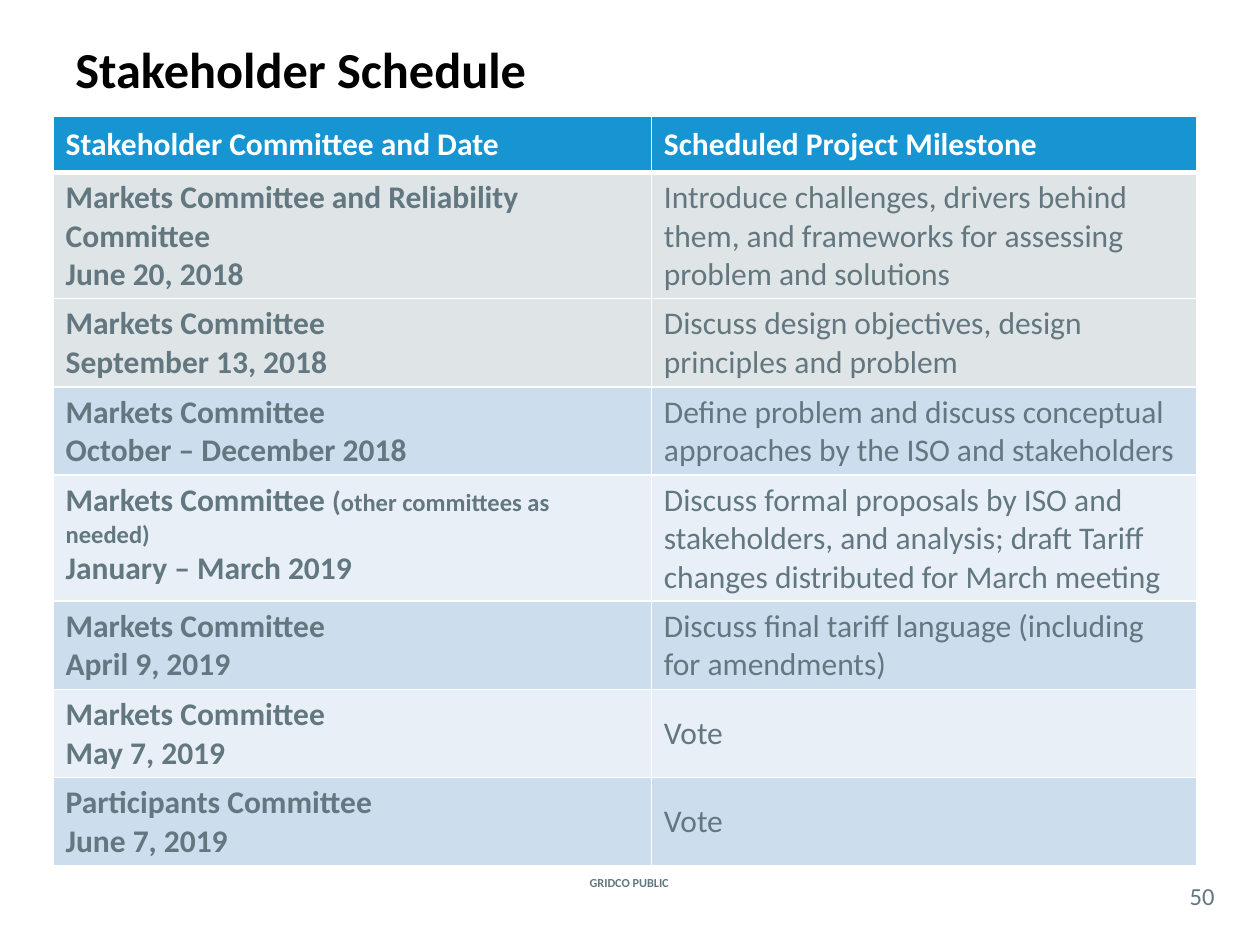
from lxml.etree import SubElement
from pptx import Presentation
from pptx.dml.color import RGBColor
from pptx.enum.text import MSO_ANCHOR, PP_ALIGN
from pptx.oxml.ns import qn
from pptx.util import Cm, Pt

COLORS = {
    "black": "000000", "white": "FFFFFF", "slate": "62777F", "header": "1795D2",
    "done": "DFE4E6", "blue": "CCDDEE", "pale": "E8EFF7",
}


def add_span(para, text, size, color, bold=False):
    span = para.add_run()
    span.text = text
    span.font.name = "Calibri"
    span.font.size = Pt(size)
    span.font.bold = bold
    span.font.color.rgb = RGBColor.from_string(COLORS[color])


def add_border(cell, side, width):
    line = SubElement(cell._tc.get_or_add_tcPr(), qn(f"a:ln{side}"), w=str(Pt(width)))
    fill = SubElement(line, qn("a:solidFill"))
    SubElement(fill, qn("a:srgbClr"), val=COLORS["white"])


deck = Presentation()
deck.slide_width, deck.slide_height = Cm(25.4), Cm(19.05)
page = deck.slides.add_slide(deck.slide_layouts[6])

# Title, footer and page number: text, position, side and top margins, style
labels = [
    ("Stakeholder Schedule", (1.27, 0.64, 22.86, 1.47), (0.25, 0.13), 28.8, "black", True, PP_ALIGN.LEFT),
    ("GRIDCO PUBLIC", (10.82, 17.45, 3.73, 0.69), (0.25, 0.13), 7, "slate", True, PP_ALIGN.CENTER),
    ("50", (23.7, 17.68, 1.07, 0.74), (0, 0), 14, "slate", False, PP_ALIGN.CENTER),
]
for text, place, (side, top), size, color, bold, align in labels:
    box = page.shapes.add_textbox(*[Cm(length) for length in place])
    frame = box.text_frame
    frame.word_wrap = True
    frame.vertical_anchor = MSO_ANCHOR.MIDDLE
    frame.margin_left = frame.margin_right = Cm(side)
    frame.margin_top = frame.margin_bottom = Cm(top)
    para = frame.paragraphs[0]
    para.alignment = align
    add_span(para, text, size, color, bold)

# Schedule rows: committee, small note, date, milestone, fill, height
schedule = [
    ("Markets Committee and Reliability Committee", "", "June 20, 2018",
     "Introduce challenges, drivers behind them, and frameworks for assessing problem and solutions",
     "done", 2.49),
    ("Markets Committee", "", "September 13, 2018",
     "Discuss design objectives, design principles and problem", "done", 1.73),
    ("Markets Committee", "", "October – December 2018",
     "Define problem and discuss conceptual approaches by the ISO and stakeholders", "blue", 1.73),
    ("Markets Committee ", "other committees as needed)", "January – March 2019",
     "Discuss formal proposals by ISO and stakeholders, and analysis; "
     "draft Tariff changes distributed for March meeting", "pale", 2.49),
    ("Markets Committee", "", "April 9, 2019",
     "Discuss final tariff language (including for amendments)", "blue", 1.73),
    ("Markets Committee", "", "May 7, 2019", "Vote", "pale", 1.73),
    ("Participants Committee", "", "June 7, 2019", "Vote", "blue", 1.73),
]
heights = [1.14] + [entry[-1] for entry in schedule]
fills = ["header"] + [entry[-2] for entry in schedule]
table = page.shapes.add_table(
    len(heights), 2, Cm(1.07), Cm(2.34), Cm(23.06), Cm(sum(heights))
).table
table.columns[0].width, table.columns[1].width = Cm(12.06), Cm(11)

# Cell fills and white borders, thicker between header and body
for index, (height, fill) in enumerate(zip(heights, fills)):
    table.rows[index].height = Cm(height)
    for cell in table.rows[index].cells:
        cell.vertical_anchor = MSO_ANCHOR.MIDDLE
        for side in "LRTB":
            thick = (index, side) in [(0, "B"), (1, "T")]
            add_border(cell, side, 3 if thick else 1)
        cell.fill.solid()
        cell.fill.fore_color.rgb = RGBColor.from_string(COLORS[fill])

# Table text
for column, heading in enumerate(["Stakeholder Committee and Date", "Scheduled Project Milestone"]):
    add_span(table.cell(0, column).text_frame.paragraphs[0], heading, 18, "white", True)
for index, (committee, note, date, milestone, _, _) in enumerate(schedule, start=1):
    cell = table.cell(index, 0)
    cell.vertical_anchor = MSO_ANCHOR.TOP
    para = cell.text_frame.paragraphs[0]
    add_span(para, committee, 18, "slate", True)
    if note:
        add_span(para, "(", 16, "slate", True)
        add_span(para, note, 14, "slate", True)
    add_span(cell.text_frame.add_paragraph(), date, 18, "slate", True)
    add_span(table.cell(index, 1).text_frame.paragraphs[0], milestone, 18, "slate")

deck.save("out.pptx")
